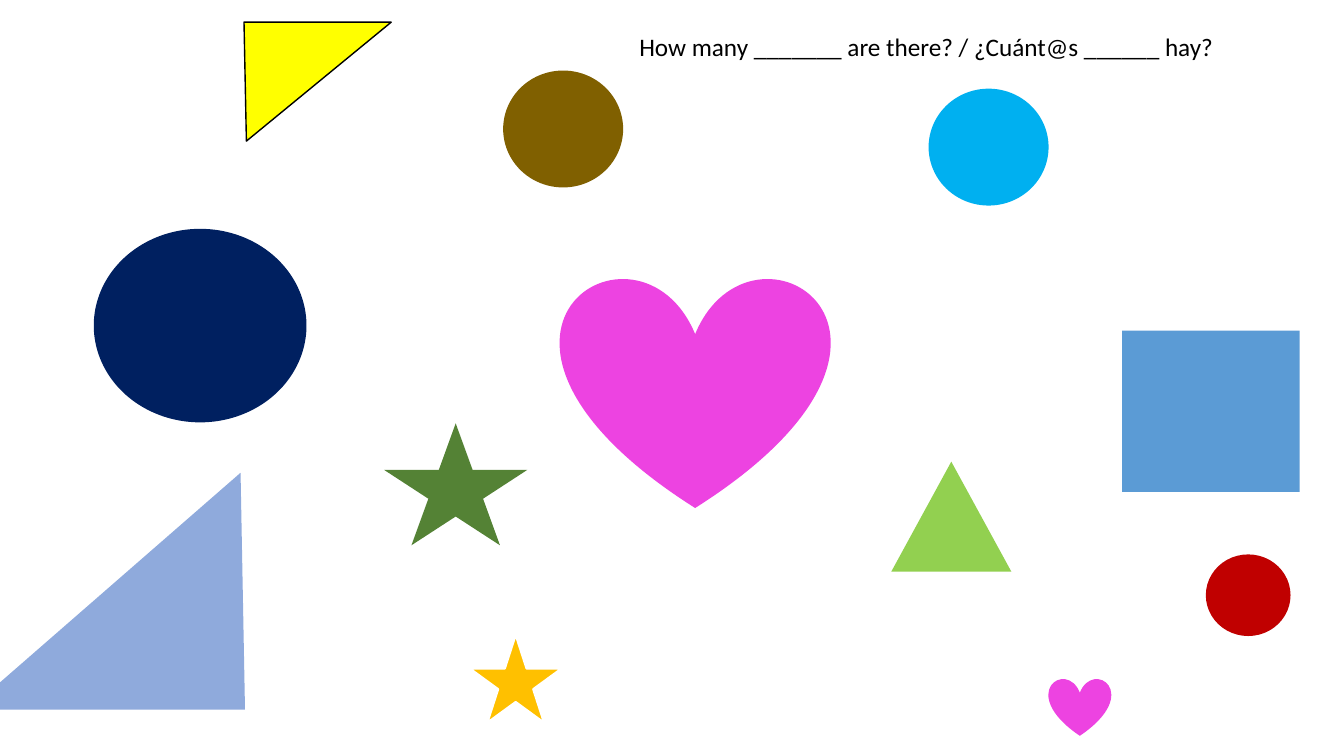
from pptx import Presentation
from pptx.dml.color import RGBColor
from pptx.enum import shapes, text
from pptx.util import Inches, Pt

BLACK = RGBColor(0x00, 0x00, 0x00)
WHITE = RGBColor(0xFF, 0xFF, 0xFF)
BROWN = RGBColor(0x80, 0x60, 0x00)
SKY = RGBColor(0x00, 0xB0, 0xF0)
NAVY = RGBColor(0x00, 0x20, 0x60)
RED = RGBColor(0xC0, 0x00, 0x00)
PINK = RGBColor(0xED, 0x43, 0xE1)
GOLD = RGBColor(0xFF, 0xC0, 0x00)
GREEN = RGBColor(0x54, 0x82, 0x35)
BLUE = RGBColor(0x5B, 0x9B, 0xD5)
LIME = RGBColor(0x92, 0xD0, 0x50)
PERIWINKLE = RGBColor(0x8F, 0xAA, 0xDC)
YELLOW = RGBColor(0xFF, 0xFF, 0x00)

CIRCLE = shapes.MSO_SHAPE.OVAL
HEART = shapes.MSO_SHAPE.HEART
STAR = shapes.MSO_SHAPE.STAR_5_POINT
SQUARE = shapes.MSO_SHAPE.RECTANGLE
TRIANGLE = shapes.MSO_SHAPE.ISOSCELES_TRIANGLE

QUESTION = "How many _______ are there? / ¿Cuánt@s ______ hay?"
QUESTION_FONT = {"name": "Calibri", "size": Pt(18)}
QUESTION_FRAME = {
    "word_wrap": False,
    "auto_size": text.MSO_AUTO_SIZE.SHAPE_TO_FIT_TEXT,
    "vertical_anchor": text.MSO_ANCHOR.TOP,
}

# kind, (left, top, width, height), fill, further options
FIGURES = [
    (CIRCLE, (4.99, 0.7, 1.19, 1.16), BROWN, {}),
    (CIRCLE, (9.21, 0.88, 1.19, 1.16), SKY, {}),
    (CIRCLE, (0.93, 2.27, 2.11, 1.92), NAVY, {}),
    (CIRCLE, (11.96, 5.5, 0.84, 0.81), RED, {}),
    (HEART, (5.56, 2.74, 2.67, 2.3), PINK, {}),
    (HEART, (10.4, 6.73, 0.62, 0.57), PINK, {}),
    (STAR, (4.66, 6.3, 0.91, 0.87), GOLD, {"outline": (WHITE, 1.5)}),
    (STAR, (3.81, 4.2, 1.42, 1.21), GREEN, {}),
    (SQUARE, (11.13, 3.28, 1.76, 1.6), BLUE, {}),
    (TRIANGLE, (8.84, 4.58, 1.19, 1.09), LIME, {}),
    (TRIANGLE, (-0.31, 4.69, 2.74, 2.35), PERIWINKLE, {"apex": 0.984}),
    (TRIANGLE, (2.42, 0.22, 1.46, 1.18), YELLOW,
     {"apex": 0.984, "rotation": 180, "outline": (BLACK, 1)}),
]


def set_attributes(target, values):
    for name, value in values.items():
        setattr(target, name, value)


def add_figure(slide, kind, box, fill, outline=None, apex=None, rotation=0):
    """Add a flat shape; apex is the share of the width where a triangle peaks."""
    sp = slide.shapes.add_shape(kind, *map(Inches, box))
    sp.shadow.inherit = False
    sp.rotation = rotation
    sp.fill.solid()
    sp.fill.fore_color.rgb = fill
    if apex is not None:
        sp.adjustments[0] = apex
    if outline:
        color, width = outline
        sp.line.color.rgb = color
        sp.line.width = Pt(width)
    else:
        sp.line.fill.background()


def set_question(slide):
    title = slide.shapes.title
    box = map(Inches, (6.24, 0.26, 5.97, 0.4))
    set_attributes(title, dict(zip(("left", "top", "width", "height"), box)))
    tf = title.text_frame
    set_attributes(tf, QUESTION_FRAME)
    p = tf.paragraphs[0]
    p.alignment = text.PP_ALIGN.LEFT
    r = p.add_run()
    r.text = QUESTION
    set_attributes(r.font, QUESTION_FONT)
    r.font.color.rgb = BLACK


def main():
    prs = Presentation()
    prs.slide_width = Inches(13.33)
    prs.slide_height = Inches(7.5)
    slide = prs.slides.add_slide(prs.slide_layouts.get_by_name("Title Only"))
    for kind, box, fill, options in FIGURES:
        add_figure(slide, kind, box, fill, **options)
    set_question(slide)
    prs.save("out.pptx")


if __name__ == "__main__":
    main()
